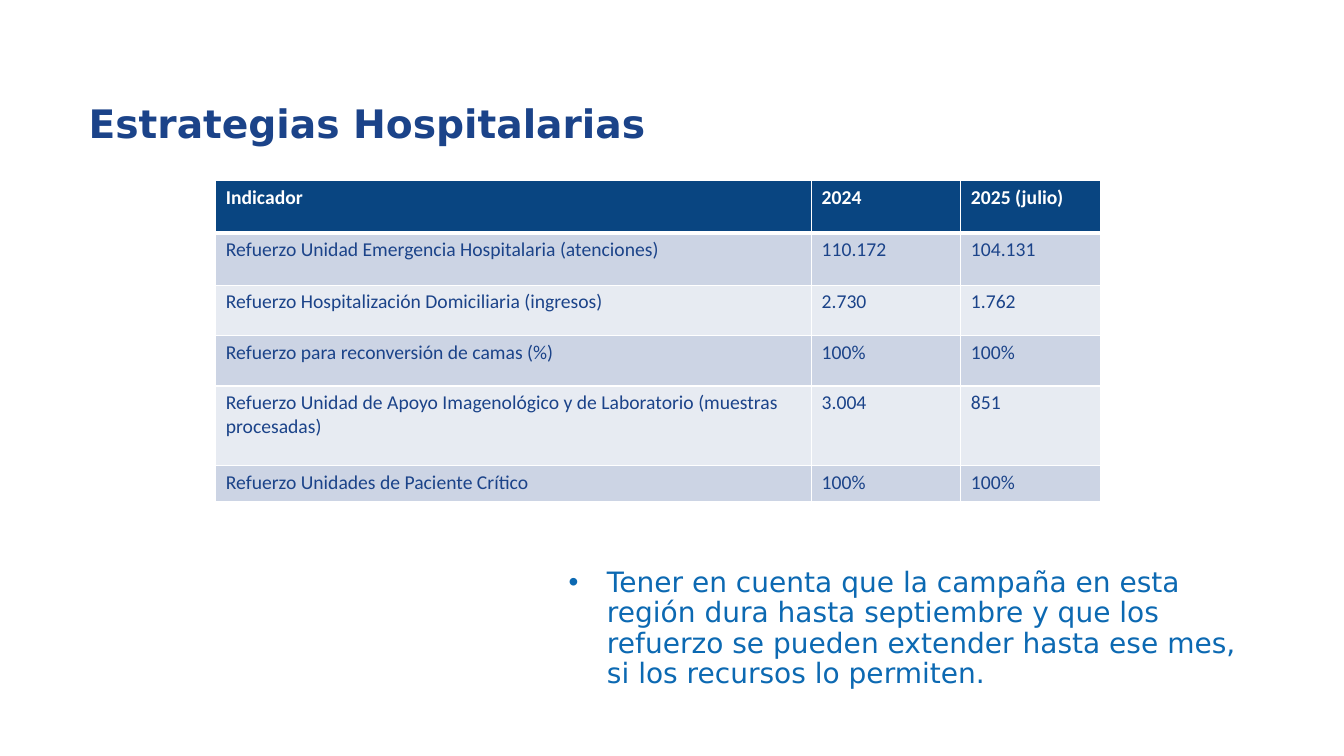
"""Build the slide on hospital strategies with its indicator table."""
import pptx
import pptx.dml.color
import pptx.enum.text
import pptx.oxml.ns
import pptx.util
from lxml import etree

PX = 9144
NAVY = pptx.dml.color.RGBColor(0x1B, 0x43, 0x89)
BLUE = pptx.dml.color.RGBColor(0x0C, 0x69, 0xB2)
HEADER = pptx.dml.color.RGBColor(0x09, 0x45, 0x81)
BAND_DARK = pptx.dml.color.RGBColor(0xCC, 0xD4, 0xE4)
BAND_LIGHT = pptx.dml.color.RGBColor(0xE7, 0xEB, 0xF2)
WHITE = pptx.dml.color.RGBColor(0xFF, 0xFF, 0xFF)

COLUMN_WIDTHS = (591, 148, 139)
ROW_HEIGHTS = (52, 52, 50, 50, 79, 36)
INDICATORS = (
    ("Indicador", "2024", "2025 (julio)"),
    ("Refuerzo Unidad Emergencia Hospitalaria (atenciones)", "110.172", "104.131"),
    ("Refuerzo Hospitalización Domiciliaria (ingresos)", "2.730", "1.762"),
    ("Refuerzo para reconversión de camas (%)", "100%", "100%"),
    ("Refuerzo Unidad de Apoyo Imagenológico y de Laboratorio (muestras procesadas)",
     "3.004", "851"),
    ("Refuerzo Unidades de Paciente Crítico", "100%", "100%"),
)
NOTE = ("Tener en cuenta que la campaña en esta región dura hasta septiembre y que los "
        "refuerzo se pueden extender hasta ese mes, si los recursos lo permiten.")


def px(length):
    """Turn a length in px into EMU."""
    return pptx.util.Emu(length * PX)


def write_text(frame, text, *, size, color, font="DejaVu Sans", bold=False,
               spacing=None, bullet_indent=0):
    """Write one formatted paragraph, bulleted when an indent is given."""
    para = frame.paragraphs[0]
    para.alignment = pptx.enum.text.PP_ALIGN.LEFT
    para.space_before = pptx.util.Pt(0)
    if spacing:
        para.line_spacing = spacing
    if bullet_indent:
        properties = para._p.get_or_add_pPr()
        properties.set("marL", str(px(bullet_indent)))
        properties.set("indent", str(-px(bullet_indent)))
        typeface = etree.SubElement(properties, pptx.oxml.ns.qn("a:buFont"))
        typeface.set("typeface", "Arial")
        bullet = etree.SubElement(properties, pptx.oxml.ns.qn("a:buChar"))
        bullet.set("char", "•")
    span = para.add_run()
    span.text = text
    span.font.name = font
    span.font.size = pptx.util.Pt(size)
    span.font.bold = bold
    span.font.color.rgb = color


def fill_placeholder(box, left, top, width, height, text, **style):
    """Move a placeholder and write its text from the top."""
    box.left, box.top, box.width, box.height = map(px, (left, top, width, height))
    frame = box.text_frame
    frame.word_wrap = True
    frame.auto_size = pptx.enum.text.MSO_AUTO_SIZE.NONE
    frame.vertical_anchor = pptx.enum.text.MSO_ANCHOR.TOP
    write_text(frame, text, spacing=0.9, **style)


def set_borders(cell, top_width, bottom_width):
    """Draw white borders around a cell, with widths in points."""
    properties = cell._tc.get_or_add_tcPr()
    widths = {"lnL": 1, "lnR": 1, "lnT": top_width, "lnB": bottom_width}
    for position, (side, width) in enumerate(widths.items()):
        line = etree.Element(pptx.oxml.ns.qn("a:" + side), w=str(pptx.util.Pt(width)))
        solid = etree.SubElement(line, pptx.oxml.ns.qn("a:solidFill"))
        etree.SubElement(solid, pptx.oxml.ns.qn("a:srgbClr"), val=str(WHITE))
        properties.insert(position, line)


def add_indicator_table(page, left, top):
    """Add the banded table of indicators by year."""
    table = page.shapes.add_table(
        len(INDICATORS), len(COLUMN_WIDTHS), px(left), px(top),
        px(sum(COLUMN_WIDTHS)), px(sum(ROW_HEIGHTS))).table
    for column, width in zip(table.columns, COLUMN_WIDTHS):
        column.width = px(width)
    for index, (row, height, values) in enumerate(
            zip(table.rows, ROW_HEIGHTS, INDICATORS)):
        row.height = px(height)
        is_header = index == 0
        band = HEADER if is_header else BAND_DARK if index % 2 else BAND_LIGHT
        for cell, value in zip(row.cells, values):
            cell.fill.solid()
            cell.fill.fore_color.rgb = band
            set_borders(cell, 3 if index == 1 else 1, 3 if is_header else 1)
            write_text(cell.text_frame, value, size=14, font="Calibri",
                       color=WHITE if is_header else NAVY, bold=is_header)


def main():
    """Build the slide and save the deck."""
    deck = pptx.Presentation()
    deck.slide_width, deck.slide_height = px(1333), px(750)
    page = deck.slides.add_slide(deck.slide_layouts[1])
    fill_placeholder(page.shapes.title, 78, 99, 1048, 65, "Estrategias Hospitalarias",
                     size=28, color=NAVY, bold=True)
    fill_placeholder(page.placeholders[1], 554, 559, 702, 137, NOTE,
                     size=20, color=BLUE, bullet_indent=38)
    add_indicator_table(page, 214, 179)
    deck.save("out.pptx")


if __name__ == "__main__":
    main()
